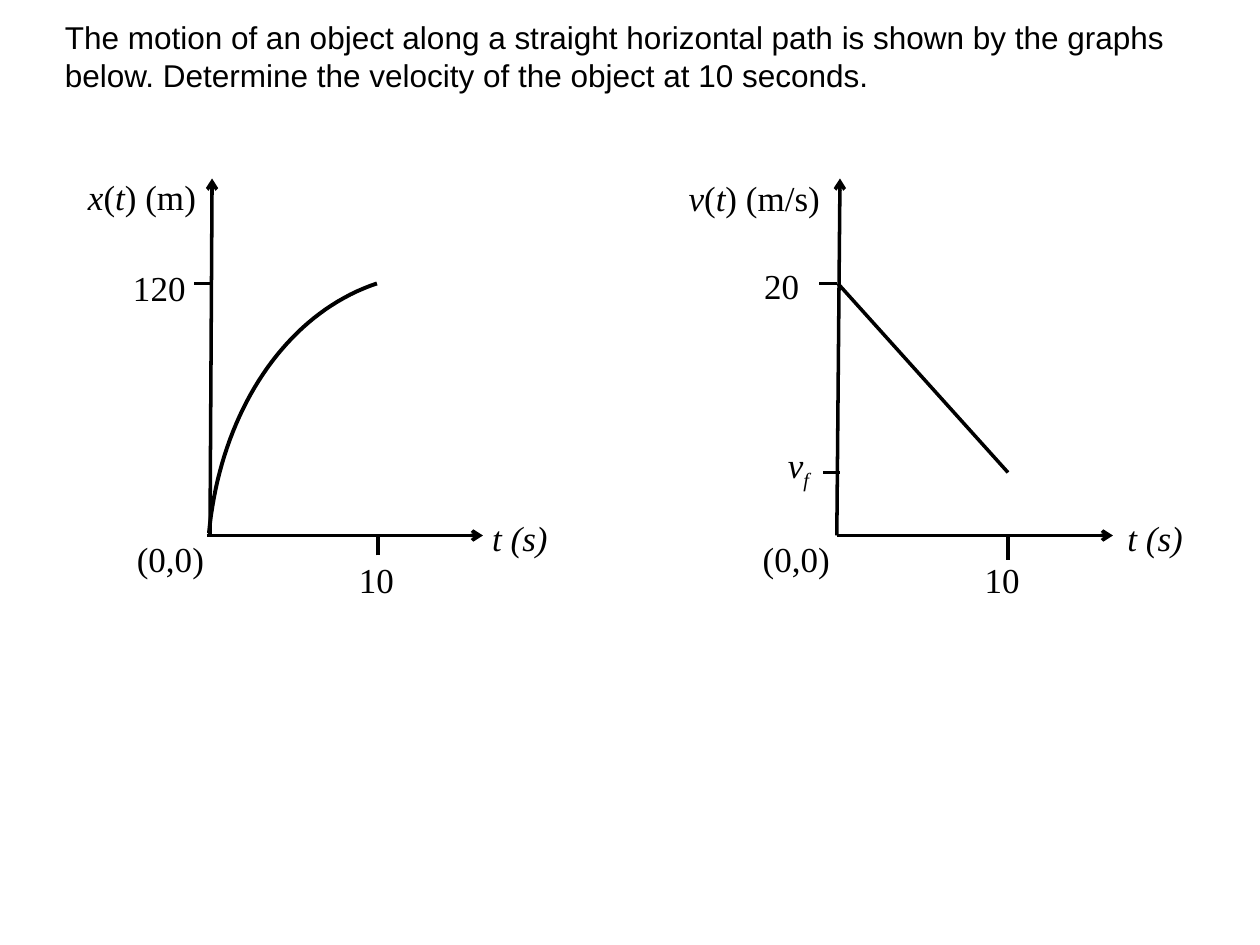
from lxml.etree import SubElement
from pptx import Presentation
from pptx.dml.color import RGBColor
from pptx.enum.shapes import MSO_CONNECTOR as Connector
from pptx.enum.text import MSO_ANCHOR as Anchor
from pptx.oxml.ns import qn
from pptx.util import Inches, Pt

COLORS = {"ink": "000000", "paper": "FFFFFF"}
COLUMNS, ROWS = 120, 90
AXIS_ROW, TOP_ROW = 51, 27
TICK_COLUMN = 16


class GraphSlide:
    body_font = "Arial"
    label_font = "Times New Roman"
    ink = RGBColor.from_string(COLORS["ink"])

    def __init__(self, presentation):
        self.cell_width = presentation.slide_width / COLUMNS
        self.cell_height = presentation.slide_height / ROWS
        self.slide = presentation.slides.add_slide(presentation.slide_layouts[6])
        fill = self.slide.background.fill
        fill.solid()
        fill.fore_color.rgb = RGBColor.from_string(COLORS["paper"])

    def place(self, column, row):
        return round(column * self.cell_width), round(row * self.cell_height)

    def text_frame(self, column, row, width, height, wrap=True):
        shape = self.slide.shapes.add_textbox(
            *self.place(column, row), *self.place(width, height))
        shape.text_frame.word_wrap = wrap
        return shape.text_frame

    def style_font(self, font, name, size):
        font.name = name
        font.size = Pt(size)
        font.color.rgb = self.ink

    def question(self, text, column, row, width, height):
        frame = self.text_frame(column, row, width, height)
        frame.vertical_anchor = Anchor.MIDDLE
        frame.text = text
        self.style_font(frame.paragraphs[0].runs[0].font, self.body_font, 18)

    def label(self, text, column, row, width, height, indent=0, subscript=False, wrap=True):
        frame = self.text_frame(column, row, width, height, wrap)
        frame.margin_left = Inches(0.1) + Pt(indent)
        paragraph = frame.paragraphs[0]
        paragraph.line_spacing = 1.15
        paragraph.space_after = Pt(10)
        for index, part in enumerate(text.split("*")):
            if part:
                run = paragraph.add_run()
                run.text = part
                self.style_font(run.font, self.label_font, 20)
                run.font.italic = index % 2 == 1
        if subscript:
            run.font._element.set("baseline", "-25000")

    def style_line(self, line, width):
        line.color.rgb = self.ink
        line.width = Pt(width)

    def line(self, start, end, width=2, arrow=False):
        connector = self.slide.shapes.add_connector(
            Connector.STRAIGHT, *self.place(*start), *self.place(*end))
        self.style_line(connector.line, width)
        properties = connector._element.spPr
        if arrow:
            SubElement(properties.find(qn("a:ln")), qn("a:tailEnd"), type="arrow")
        SubElement(properties, qn("a:effectLst"))

    def curve(self, controls, steps=40):
        points = []
        for step in range(steps + 1):
            t = step / steps
            weights = ((1 - t) ** 3, 3 * t * (1 - t) ** 2, 3 * t ** 2 * (1 - t), t ** 3)
            points.append(self.place(
                *(sum(w * p[axis] for w, p in zip(weights, controls)) for axis in (0, 1))))
        builder = self.slide.shapes.build_freeform(*points[0])
        builder.add_line_segments(points[1:], close=False)
        shape = builder.convert_to_shape()
        shape.shadow.inherit = False
        shape.fill.background()
        self.style_line(shape.line, 2.25)

    def axes(self, left, foot, top, tick_length, time_column):
        self.line((left, AXIS_ROW), (left + 26.3, AXIS_ROW), arrow=True)
        self.line((foot, AXIS_ROW), (top, 17), arrow=True)
        tick = left + TICK_COLUMN + 0.3
        self.line((tick, AXIS_ROW + tick_length), (tick, AXIS_ROW), 2.25)
        self.label("*t (s)*", time_column, 48, 10.8, 7)


def main():
    presentation = Presentation()
    presentation.slide_width = Inches(10)
    presentation.slide_height = Inches(7.5)
    graphs = GraphSlide(presentation)

    graphs.question(
        "The motion of an object along a straight horizontal path is shown by the graphs "
        "below. Determine the velocity of the object at 10 seconds.", 5, 1.1, 109, 8.5)

    graphs.axes(19.7, 20, 20.2, 1.9, 45.7)
    graphs.line((18.5, TOP_ROW), (20, TOP_ROW), 2.25)
    graphs.curve([(19.9, 50.8), (21, 39.2), (27.2, 29.9), (35.9, TOP_ROW)])
    graphs.label("*x*(*t*) (m)", 7.2, 15.5, 12.7, 5.5, wrap=False)
    graphs.label("120", 9.8, 24.2, 11.2, 7.7, indent=10)
    graphs.label("(0,0)", 11, 50, 10.9, 7, indent=5)
    graphs.label("10", 33, 52, 7.7, 7.4)

    graphs.axes(79.7, 79.7, 80, 2.3, 106.2)
    graphs.line((78, TOP_ROW), (79.7, TOP_ROW))
    graphs.line((78.4, 45), (80, 45))
    graphs.line((79.8, TOP_ROW), (96, 45))
    graphs.label("*v*(*t*) (m/s)", 64.4, 15.6, 17.5, 6.5)
    graphs.label("20", 71.6, 24, 7, 6.7)
    graphs.label("*v**f*", 73, 41, 7.8, 7.6, indent=5, subscript=True)
    graphs.label("(0,0)", 70.6, 50, 12.5, 6.4, indent=5)
    graphs.label("10", 92.6, 52, 7.7, 7.4)

    presentation.save("out.pptx")


if __name__ == "__main__":
    main()
